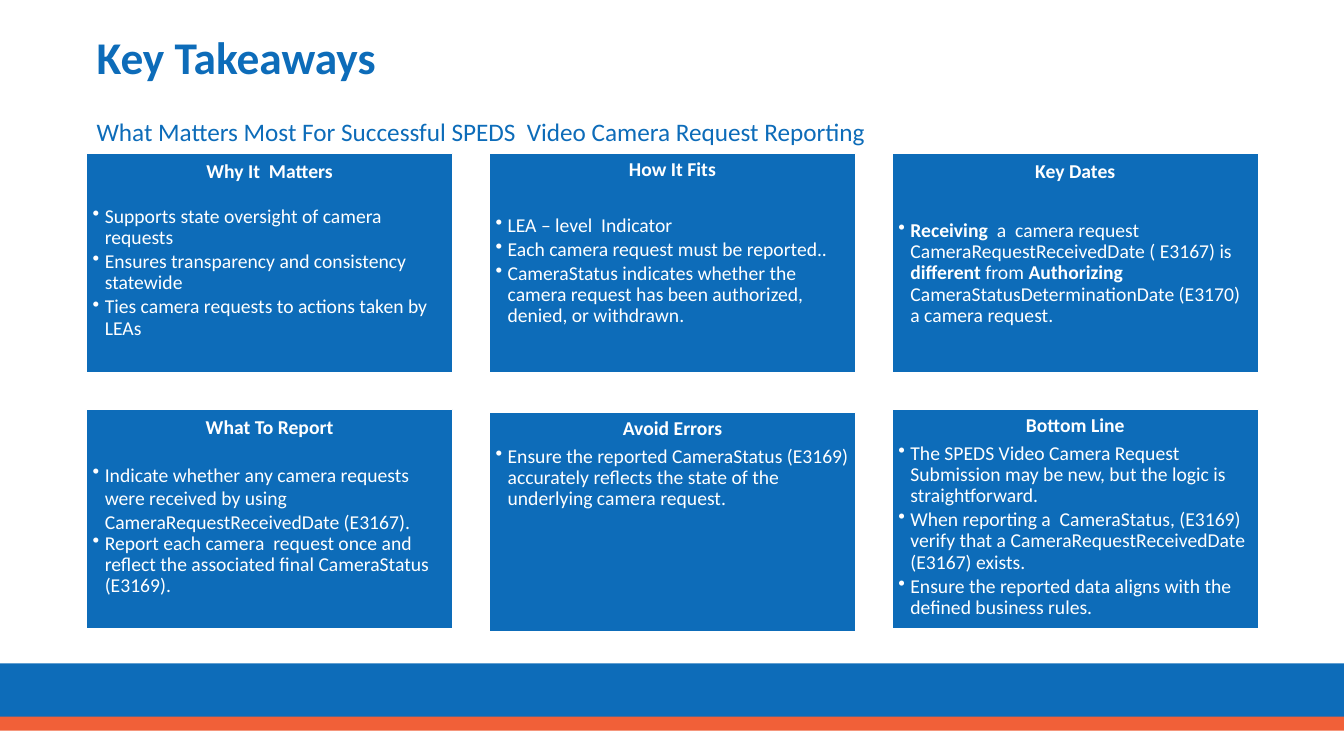
from dataclasses import dataclass

from lxml.etree import SubElement
from pptx import Presentation
from pptx.dml.color import RGBColor
from pptx.enum.shapes import MSO_SHAPE as Shape
from pptx.enum.text import MSO_ANCHOR as Anchor, PP_ALIGN as Align
from pptx.oxml.ns import qn
from pptx.shapes.autoshape import Shape as AutoShape
from pptx.slide import Slide
from pptx.text.text import TextFrame
from pptx.util import Inches, Pt

COLORS = {"blue": "0D6CB9", "orange": "F16038", "white": "FFFFFF"}
FONT = "Calibri"
LEFT, COLUMN_STEP = 0.86, 3.995
CARD_WIDTH, CARD_HEIGHT = 3.63, 2.18
BULLET_INDENT = Inches(0.12)


@dataclass(frozen=True)
class Card:
    """A titled box; **double asterisks** mark bold words in its bullets."""
    column: int
    top: float
    title: str
    bullets: tuple[str, ...]
    title_spacing: float = 1.0
    title_gap: float = 17
    first_spacing: float = 0.9
    first_gap: float = 2


CARDS = (
    Card(0, 1.52, "Why It  Matters", (
        "Supports state oversight of camera requests",
        "Ensures transparency and consistency statewide",
        "Ties camera requests to actions taken by LEAs")),
    Card(1, 1.52, "How It Fits", (
        "LEA – level  Indicator",
        "Each camera request must be reported..",
        "CameraStatus indicates whether the camera request has been "
        "authorized, denied, or withdrawn."),
        title_spacing=0.9, title_gap=25),
    Card(2, 1.52, "Key Dates", (
        "**Receiving**  a  camera request CameraRequestReceivedDate ( E3167) is "
        "**different** from **Authorizing** CameraStatusDeterminationDate "
        "(E3170) a camera request.",),
        title_gap=27),
    Card(0, 4.06, "What To Report", (
        "Indicate whether any camera requests were received by using "
        "CameraRequestReceivedDate (E3167).",
        "Report each camera  request once and reflect the associated final "
        "CameraStatus (E3169)."),
        first_spacing=1.0, first_gap=0),
    Card(1, 4.09, "Avoid Errors", (
        "Ensure the reported CameraStatus (E3169) accurately reflects the "
        "state of the underlying camera request.",),
        title_spacing=0.9, title_gap=5),
    Card(2, 4.06, "Bottom Line", (
        "The SPEDS Video Camera Request Submission may be new, but the logic "
        "is straightforward.",
        "When reporting a  CameraStatus, (E3169) verify that a "
        "CameraRequestReceivedDate (E3167) exists.",
        "Ensure the reported data aligns with the defined business rules."),
        title_spacing=0.9, title_gap=5),
)


def rgb(name: str) -> RGBColor:
    return RGBColor.from_string(COLORS[name])


def add_text(tf: TextFrame, text: str, *, size: float = 14, color: str = "white",
             bold: bool = False, align: Align = Align.LEFT, spacing: float = 1.0,
             after: float = 0, bullet: bool = False) -> None:
    """Fill the empty first paragraph or append one; ** toggles bold."""
    p = tf.paragraphs[0]
    if p.runs:
        p = tf.add_paragraph()
    p.alignment, p.line_spacing = align, spacing
    p.space_before, p.space_after = Pt(0), Pt(after)
    if bullet:
        pPr = p._p.get_or_add_pPr()
        pPr.set("marL", str(BULLET_INDENT))
        pPr.set("indent", str(-BULLET_INDENT))
        SubElement(pPr, qn("a:buChar"), char="•")
    for i, part in enumerate(text.split("**")):
        if part:
            r = p.add_run()
            r.text = part
            r.font.name, r.font.size = FONT, Pt(size)
            r.font.bold = bold != (i % 2 == 1)
            r.font.color.rgb = rgb(color)


def add_rect(s: Slide, left: float, top: float, width: float, height: float,
             color: str) -> AutoShape:
    sp = s.shapes.add_shape(Shape.RECTANGLE, Inches(left), Inches(top),
                            Inches(width), Inches(height))
    sp.shadow.inherit = False
    sp.fill.solid()
    sp.fill.fore_color.rgb = rgb(color)
    sp.line.fill.background()
    return sp


def add_card(s: Slide, card: Card) -> None:
    sp = add_rect(s, LEFT + card.column * COLUMN_STEP, card.top,
                  CARD_WIDTH, CARD_HEIGHT, "blue")
    sp.line.color.rgb = rgb("white")
    sp.line.width = Pt(1)
    tf = sp.text_frame
    tf.word_wrap = True
    tf.vertical_anchor = Anchor.TOP
    tf.margin_left = tf.margin_right = tf.margin_top = tf.margin_bottom = Inches(0.06)
    add_text(tf, card.title, bold=True, align=Align.CENTER,
             spacing=card.title_spacing, after=card.title_gap)
    for i, bullet in enumerate(card.bullets):
        add_text(tf, bullet, bullet=True,
                 spacing=0.9 if i else card.first_spacing,
                 after=2 if i else card.first_gap)


def add_heading(s: Slide, text: str, top: float, width: float, height: float,
                **text_format) -> None:
    tf = s.shapes.add_textbox(Inches(LEFT), Inches(top), Inches(width),
                              Inches(height)).text_frame
    tf.word_wrap = True
    tf.vertical_anchor = Anchor.MIDDLE
    add_text(tf, text, color="blue", **text_format)


def main() -> None:
    prs = Presentation()
    prs.slide_width, prs.slide_height = Inches(13.33), Inches(7.5)
    s = prs.slides.add_slide(prs.slide_layouts[6])
    add_rect(s, 0, 6.58, 13.33, 0.58, "blue")
    add_rect(s, 0, 7.11, 13.33, 0.14, "orange")
    add_heading(s, "Key Takeaways", 0.18, 12.16, 0.82, size=32.4, bold=True,
                spacing=0.9)
    for card in CARDS:
        add_card(s, card)
    add_heading(s, "What Matters Most For Successful SPEDS  Video Camera Request "
                "Reporting", 1.1, 8.64, 0.4, size=18)
    prs.save("out.pptx")


if __name__ == "__main__":
    main()
